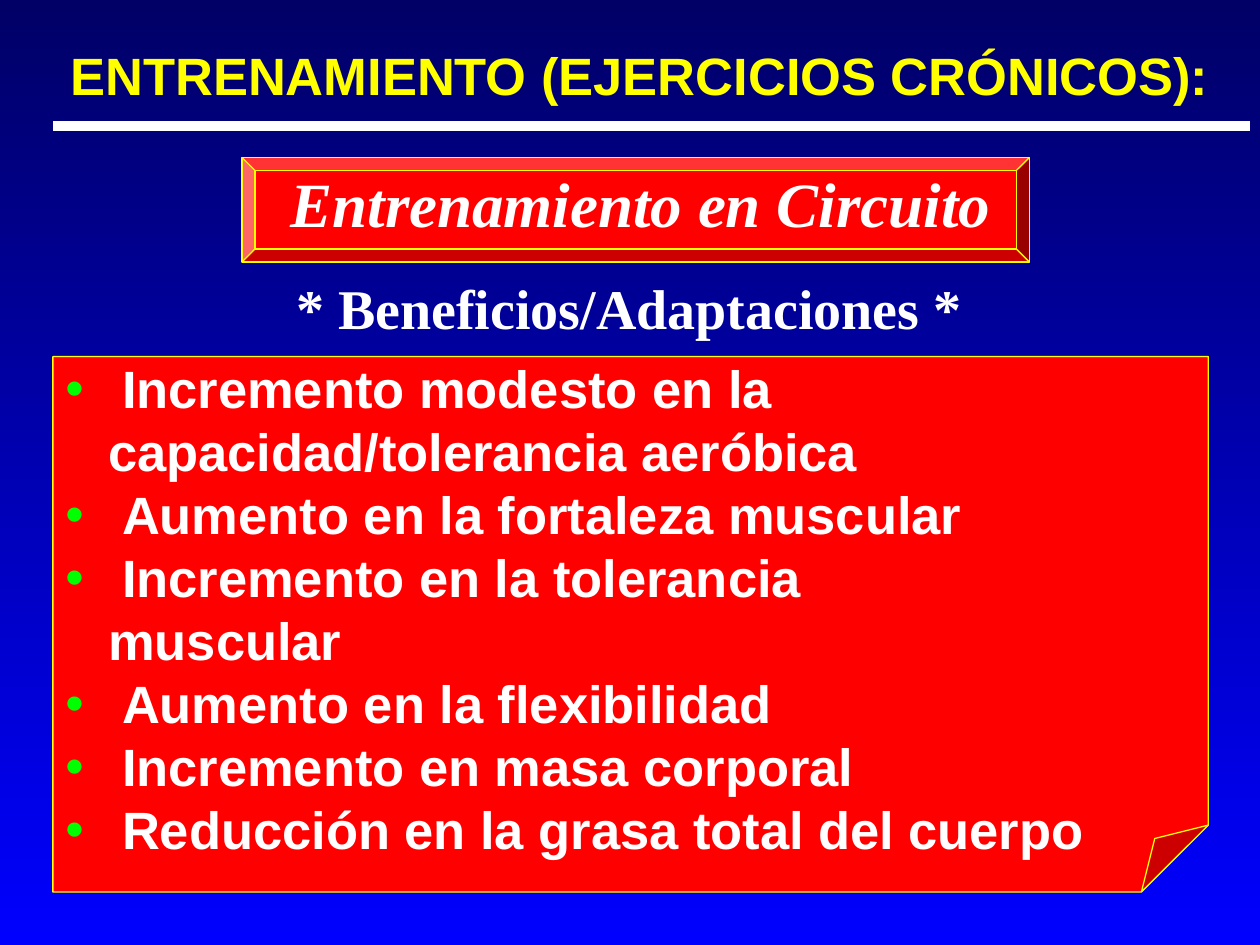
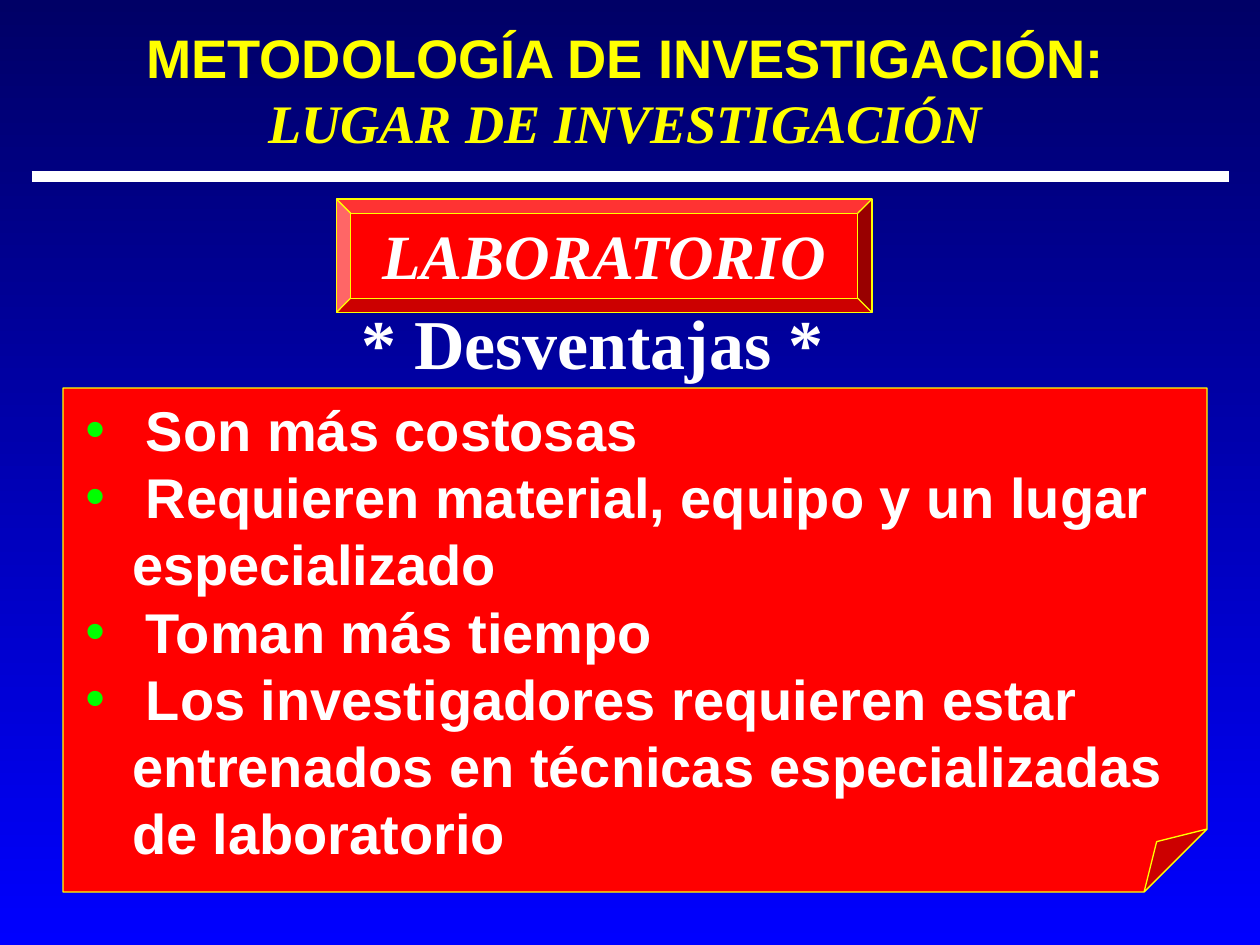
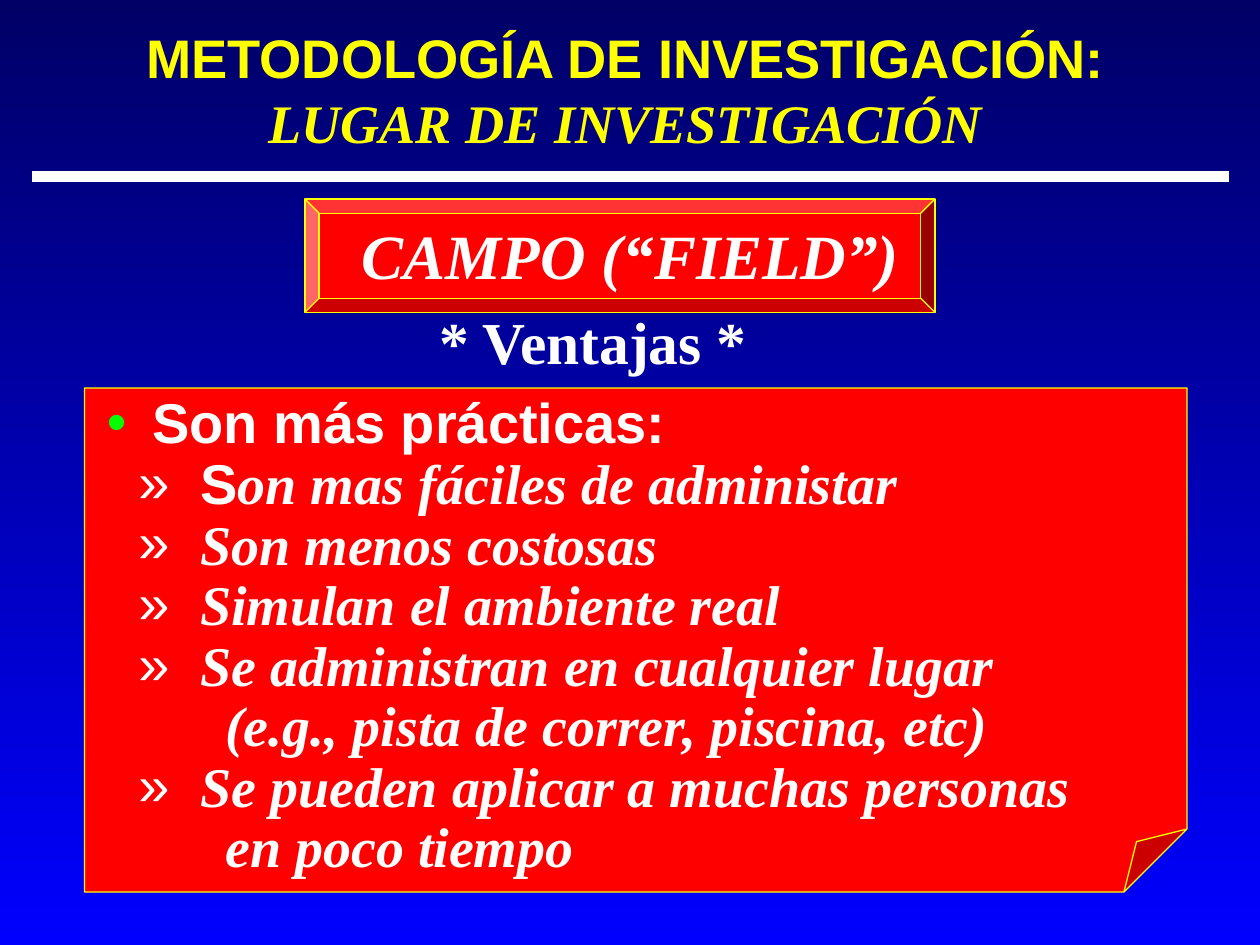
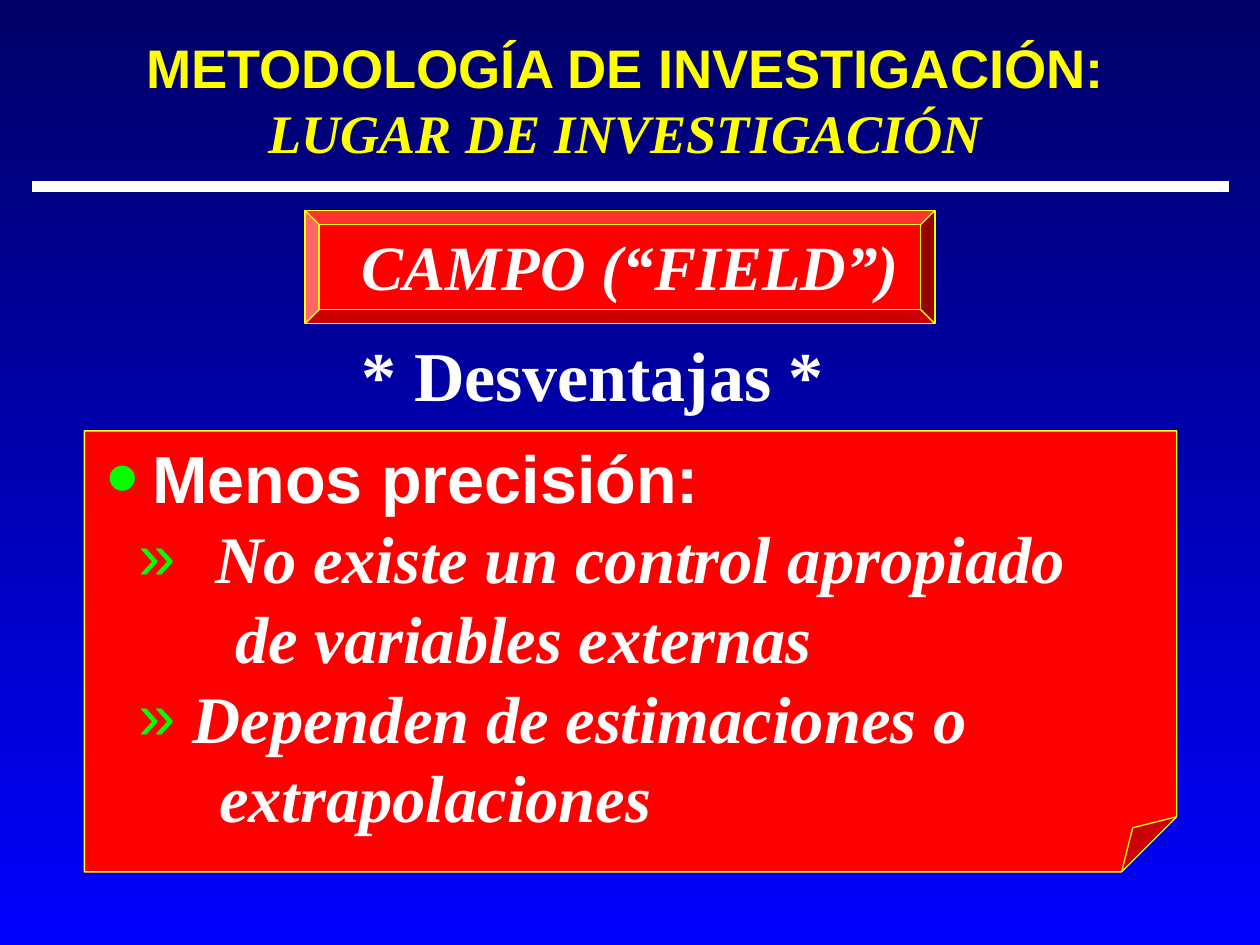
from lxml.etree import SubElement
from pptx import Presentation
from pptx.dml.color import RGBColor
from pptx.enum.shapes import MSO_CONNECTOR, MSO_SHAPE
from pptx.enum.text import MSO_ANCHOR, MSO_AUTO_SIZE, PP_ALIGN
from pptx.oxml.ns import qn
from pptx.util import Inches, Pt

SANS, SERIF = "Arial", "Times New Roman"
NAVY, BLUE, RED = "000066", "0000FF", "FF0000"
YELLOW, WHITE, GREEN, GRAY = "FFFF00", "FFFFFF", "00FF00", "808080"


def paint(color, value):
    color.rgb = RGBColor.from_string(value)


def write(paragraph, text, font=SANS, size=32, color=WHITE, italic=False, shadow=False):
    run = paragraph.add_run()
    run.text = text
    run.font.name, run.font.size = font, Pt(size)
    run.font.bold, run.font.italic = True, italic
    paint(run.font.color, color)
    if shadow:
        properties = run._r.get_or_add_rPr()
        effects = properties.makeelement(qn("a:effectLst"), {})
        properties.find(qn("a:solidFill")).addnext(effects)
        outer = SubElement(effects, qn("a:outerShdw"), dist="38100", dir="2700000")
        SubElement(outer, qn("a:srgbClr"), val=GRAY)


research = dict(title=["METODOLOGÍA DE INVESTIGACIÓN:", "LUGAR DE INVESTIGACIÓN"],
                title_size=31, title_box=(0.42, 0.25, 9.08, 0.92), rule=(0.25, 1.4, 9.75))
bullet, plain = ("•", GREEN, 0), (None, None, 0)
white_quote, green_quote, subplain = ("»", WHITE, 1), ("»", GREEN, 1), (None, None, 1)

topics = [
    dict(title=["ENTRENAMIENTO (EJERCICIOS CRÓNICOS):"], title_size=30,
         title_box=(0.33, 0.05, 9.5, 1.08), rule=(0.42, 1, 9.92),
         badge="Entrenamiento en Circuito", badge_box=(1.92, 1.25, 6.25, 0.83),
         badge_text=(1.92, 1.42, 6.33, 0.42),
         heading="* Beneficios/Adaptaciones *", heading_size=32,
         heading_box=(2.08, 2.12, 5.83, 0.63),
         card=(0.42, 2.83, 9.17, 4.25), body_box=(0.42, 2.78, 8.75, 4.13),
         size=30, spacing=1, points=[
             (bullet, 0.45, "Incremento modesto en la"),
             (plain, 0.34, "capacidad/tolerancia aeróbica"),
             (bullet, 0.45, "Aumento en la fortaleza muscular"),
             (bullet, 0.45, "Incremento en la tolerancia"),
             (plain, 0.34, "muscular"),
             (bullet, 0.45, "Aumento en la flexibilidad"),
             (bullet, 0.45, "Incremento en masa corporal"),
             (bullet, 0.45, "Reducción en la grasa total del cuerpo")]),
    dict(research, badge="LABORATORIO", badge_box=(2.67, 1.58, 4.25, 0.9),
         badge_text=(2.67, 1.83, 4.25, 0.48),
         heading="* Desventajas *", heading_size=40, heading_box=(1.33, 2.33, 6.75, 0.77),
         card=(0.5, 3.08, 9.08, 4), body_box=(0.58, 3.09, 9, 3.9),
         size=32, spacing=1, points=[
             (bullet, 0.48, "Son más costosas"),
             (bullet, 0.48, "Requieren material, equipo y un lugar"),
             (plain, 0.37, "especializado"),
             (bullet, 0.48, "Toman más tiempo"),
             (bullet, 0.48, "Los investigadores requieren estar"),
             (plain, 0.37, "entrenados en técnicas especializadas"),
             (plain, 0.37, "de laboratorio")]),
    dict(research, badge="CAMPO (“FIELD”)", badge_box=(2.42, 1.58, 5, 0.9),
         badge_text=(2.67, 1.83, 4.67, 0.5),
         heading="* Ventajas *", heading_size=34, heading_box=(1.33, 2.37, 6.75, 0.77),
         card=(0.67, 3.08, 8.75, 4), body_box=(0.75, 3.09, 8.5, 3.99),
         size=32, spacing=0.9, points=[
             (bullet, 0.36, "Son más prácticas:"),
             (white_quote, 0.74, "Son mas fáciles de administar"),
             (white_quote, 0.74, "Son menos costosas"),
             (white_quote, 0.74, "Simulan el ambiente real"),
             (white_quote, 0.74, "Se administran en cualquier lugar"),
             (subplain, 0.94, "(e.g., pista de correr, piscina, etc)"),
             (white_quote, 0.74, "Se pueden aplicar a muchas personas"),
             (subplain, 0.94, "en poco tiempo")]),
    dict(research, title_box=(0.42, 0.33, 9.08, 0.92), rule=(0.25, 1.48, 9.75),
         badge="CAMPO (“FIELD”)", badge_box=(2.42, 1.67, 5, 0.9),
         badge_text=(2.67, 1.92, 4.67, 0.5),
         heading="* Desventajas *", heading_size=40, heading_box=(1.33, 2.58, 6.75, 0.77),
         card=(0.67, 3.42, 8.67, 3.5), body_box=(0.75, 3.42, 8.5, 3.27),
         size=38, spacing=1, points=[
             (bullet, 0.36, "Menos precisión:"),
             (green_quote, 0.86, "No existe un control apropiado"),
             (subplain, 1.02, "de variables externas"),
             (green_quote, 0.68, "Dependen de estimaciones o"),
             (subplain, 0.89, "extrapolaciones")]),
]

deck = Presentation()
deck.slide_width, deck.slide_height = Inches(10), Inches(7.5)
backdrop = deck.slide_master.background.fill
backdrop.gradient()
backdrop.gradient_angle = 270
for stop, shade, position in zip(backdrop.gradient_stops, (NAVY, BLUE), (0, 1)):
    paint(stop.color, shade)
    stop.position = position

for topic in topics:
    slide = deck.slides.add_slide(deck.slide_layouts[6])

    for preset, place in ((MSO_SHAPE.BEVEL, "badge_box"), (MSO_SHAPE.FOLDED_CORNER, "card")):
        panel = slide.shapes.add_shape(preset, *map(Inches, topic[place]))
        panel._element.spPr.prstGeom.rewrite_guides([("adj", 12500)])
        panel.shadow.inherit = False
        panel.fill.solid()
        paint(panel.fill.fore_color, RED)
        paint(panel.line.color, YELLOW)
        panel.line.width = Pt(0.75)

    left, top, right = map(Inches, topic["rule"])
    rule = slide.shapes.add_connector(MSO_CONNECTOR.STRAIGHT, left, top, right, top)
    paint(rule.line.color, WHITE)
    rule.line.width = Pt(6)
    SubElement(rule._element.spPr, qn("a:effectLst"))

    frames = {}
    for part in ("badge_text", "body_box", "heading_box", "title_box"):
        frames[part] = slide.shapes.add_textbox(*map(Inches, topic[part])).text_frame
        frames[part].word_wrap = True
        frames[part].paragraphs[0].alignment = PP_ALIGN.CENTER

    badge = frames["badge_text"].paragraphs[0]
    badge.line_spacing, badge.space_before = 0.7, Pt(7)
    write(badge, topic["badge"], font=SERIF, size=36, italic=True, shadow=True)

    write(frames["heading_box"].paragraphs[0], topic["heading"], font=SERIF,
          size=topic["heading_size"])

    frames["title_box"].vertical_anchor = MSO_ANCHOR.MIDDLE
    title = frames["title_box"].paragraphs[0]
    for row, line in enumerate(topic["title"]):
        if row:
            title.add_line_break()
        write(title, line, font=SERIF if row else SANS, size=topic["title_size"],
              color=YELLOW, italic=row > 0)

    body = frames["body_box"]
    body.auto_size = MSO_AUTO_SIZE.SHAPE_TO_FIT_TEXT
    for row, ((mark, mark_color, level), margin, text) in enumerate(topic["points"]):
        point = body.add_paragraph() if row else body.paragraphs[0]
        point.alignment, point.level = PP_ALIGN.LEFT, level
        point.line_spacing = topic["spacing"]
        hang = (0.25 * level - margin) if mark else 0
        properties = point._p.get_or_add_pPr()
        properties.set("marL", str(Inches(margin)))
        properties.set("indent", str(Inches(hang)))
        if mark:
            tint = SubElement(properties, qn("a:buClr"))
            SubElement(tint, qn("a:srgbClr"), val=mark_color)
            if topic["size"] == 38 and not level:
                SubElement(properties, qn("a:buSzPct"), val="140000")
            SubElement(properties, qn("a:buFont"), typeface=SANS)
            SubElement(properties, qn("a:buChar"), char=mark)
        if text == "Son mas fáciles de administar":
            write(point, text[0], size=topic["size"])
            text = text[1:]
        write(point, text, font=SERIF if level else SANS, size=topic["size"], italic=level > 0)

deck.save("out.pptx")
